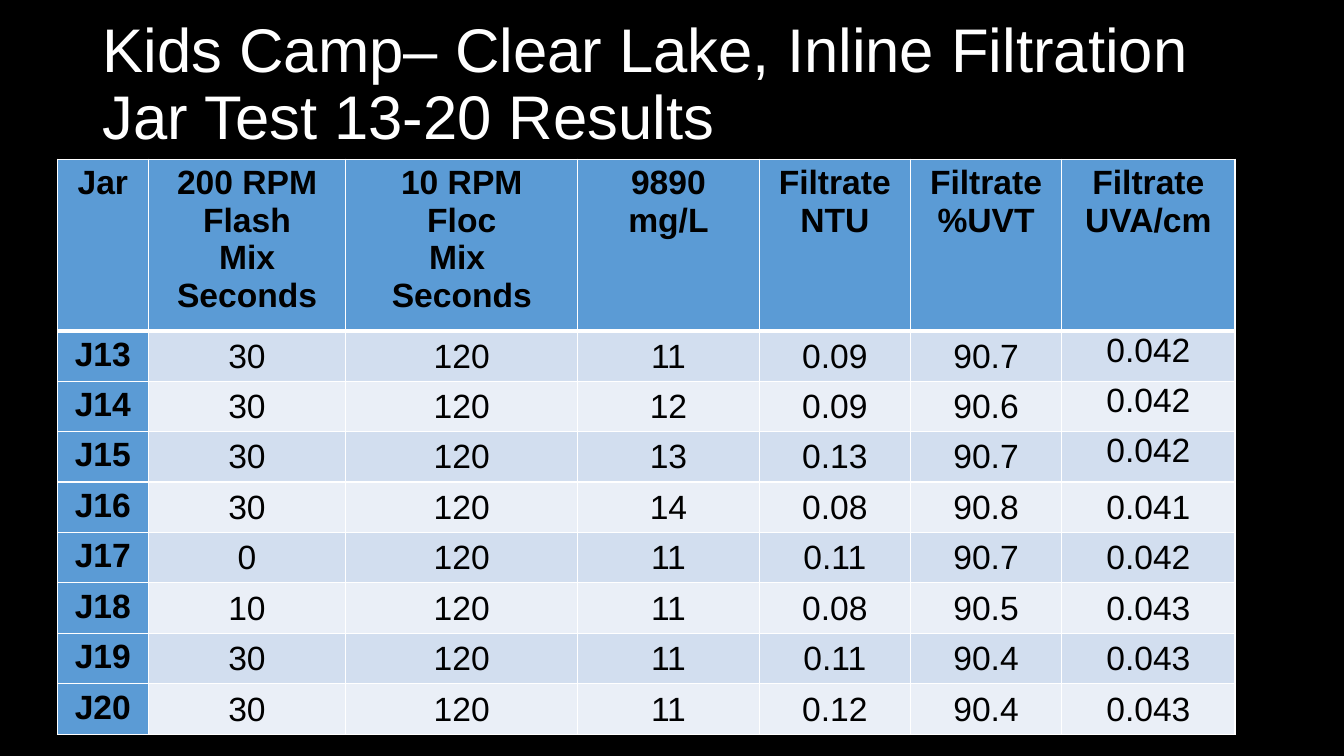
from dataclasses import dataclass

from lxml import etree
from pptx import Presentation
from pptx.dml.color import RGBColor
from pptx.enum.text import MSO_ANCHOR, PP_ALIGN
from pptx.oxml.ns import qn
from pptx.util import Inches, Pt

CENTER = PP_ALIGN.CENTER
TOP, MIDDLE = MSO_ANCHOR.TOP, MSO_ANCHOR.MIDDLE


@dataclass(frozen=True)
class Theme:
    font: str = "Arial"
    title_size: int = 44
    table_size: int = 24
    background: str = "000000"
    title: str = "FFFFFF"
    text: str = "000000"
    border: str = "FFFFFF"
    heading: str = "5B9BD5"
    bands: tuple = ("D2DEEF", "EAEFF7")


THEME = Theme()

TITLE_LINES = ["Kids Camp– Clear Lake, Inline Filtration", "Jar Test 13-20 Results"]
HEADINGS = [
    ["Jar"],
    ["200 RPM", "Flash", "Mix", "Seconds"],
    ["10 RPM", "Floc", "Mix ", "Seconds"],
    ["9890", "mg/L"],
    ["Filtrate", "NTU"],
    ["Filtrate", "%UVT"],
    ["Filtrate", "UVA/cm"],
]
RESULTS = [
    ("J13", "30", "120", "11", "0.09", "90.7", "0.042"),
    ("J14", "30", "120", "12", "0.09", "90.6", "0.042"),
    ("J15", "30", "120", "13", "0.13", "90.7", "0.042"),
    ("J16", "30", "120", "14", "0.08", "90.8", "0.041"),
    ("J17", "0", "120", "11", "0.11", "90.7", "0.042"),
    ("J18", "10", "120", "11", "0.08", "90.5", "0.043"),
    ("J19", "30", "120", "11", "0.11", "90.4", "0.043"),
    ("J20", "30", "120", "11", "0.12", "90.4", "0.043"),
]
COLUMN_WIDTHS = [0.9, 1.96, 2.3, 1.8, 1.5, 1.5, 1.72]
HEADER_HEIGHT, ROW_HEIGHT = 1.59, 0.47
LAST_COLUMN = len(COLUMN_WIDTHS) - 1
TOP_ALIGNED_ROWS = 3  # the last column sits at the top in these rows


def add_run(paragraph, text, size, color, bold=False):
    run = paragraph.add_run()
    run.text = text
    run.font.name = THEME.font
    run.font.size = Pt(size)
    run.font.bold = bold
    run.font.color.rgb = RGBColor.from_string(color)


def set_borders(cell, top, bottom):
    """Draw all four sides; top and bottom are widths in points."""
    properties = cell._tc.get_or_add_tcPr()
    sides = [("a:lnL", 1), ("a:lnR", 1), ("a:lnT", top), ("a:lnB", bottom)]
    for position, (tag, width) in enumerate(sides):
        line = etree.Element(qn(tag), w=str(Pt(width)))
        fill = etree.SubElement(line, qn("a:solidFill"))
        etree.SubElement(fill, qn("a:srgbClr"), val=THEME.border)
        properties.insert(position, line)


presentation = Presentation()
presentation.slide_width = Inches(13.33)
presentation.slide_height = Inches(7.5)
slide = presentation.slides.add_slide(presentation.slide_layouts[6])
slide.background.fill.solid()
slide.background.fill.fore_color.rgb = RGBColor.from_string(THEME.background)

# Title
title = slide.shapes.add_textbox(Inches(0.92), Inches(0.13), Inches(11.5), Inches(1.45))
title.text_frame.word_wrap = True
title.text_frame.vertical_anchor = MIDDLE
paragraph = title.text_frame.paragraphs[0]
paragraph.line_spacing = 0.9
for index, line_text in enumerate(TITLE_LINES):
    if index:
        paragraph.add_line_break()
    add_run(paragraph, line_text, THEME.title_size, THEME.title)

# Results table
rows = [HEADINGS] + [[[value] for value in result] for result in RESULTS]
table = slide.shapes.add_table(
    len(rows), len(COLUMN_WIDTHS), Inches(0.57), Inches(1.58),
    Inches(sum(COLUMN_WIDTHS)), Inches(HEADER_HEIGHT + ROW_HEIGHT * len(RESULTS)),
).table
for column, width in zip(table.columns, COLUMN_WIDTHS):
    column.width = Inches(width)

for row_index, row in enumerate(rows):
    is_header = row_index == 0
    table.rows[row_index].height = Inches(HEADER_HEIGHT if is_header else ROW_HEIGHT)
    for column_index, lines in enumerate(row):
        cell = table.cell(row_index, column_index)
        is_heading = is_header or column_index == 0
        at_top = column_index == LAST_COLUMN and row_index <= TOP_ALIGNED_ROWS
        cell.vertical_anchor = TOP if is_heading or at_top else MIDDLE
        if not is_heading:
            cell.margin_left = cell.margin_top = cell.margin_right = Inches(0.01)
            cell.margin_bottom = 0
        color = THEME.heading if is_heading else THEME.bands[(row_index - 1) % 2]
        cell.fill.solid()
        cell.fill.fore_color.rgb = RGBColor.from_string(color)
        set_borders(cell, top=3 if row_index == 1 else 1, bottom=3 if is_header else 1)
        for index, line_text in enumerate(lines):
            text_frame = cell.text_frame
            paragraph = text_frame.add_paragraph() if index else text_frame.paragraphs[0]
            paragraph.alignment = CENTER
            add_run(paragraph, line_text, THEME.table_size, THEME.text, is_heading)

presentation.save("out.pptx")
